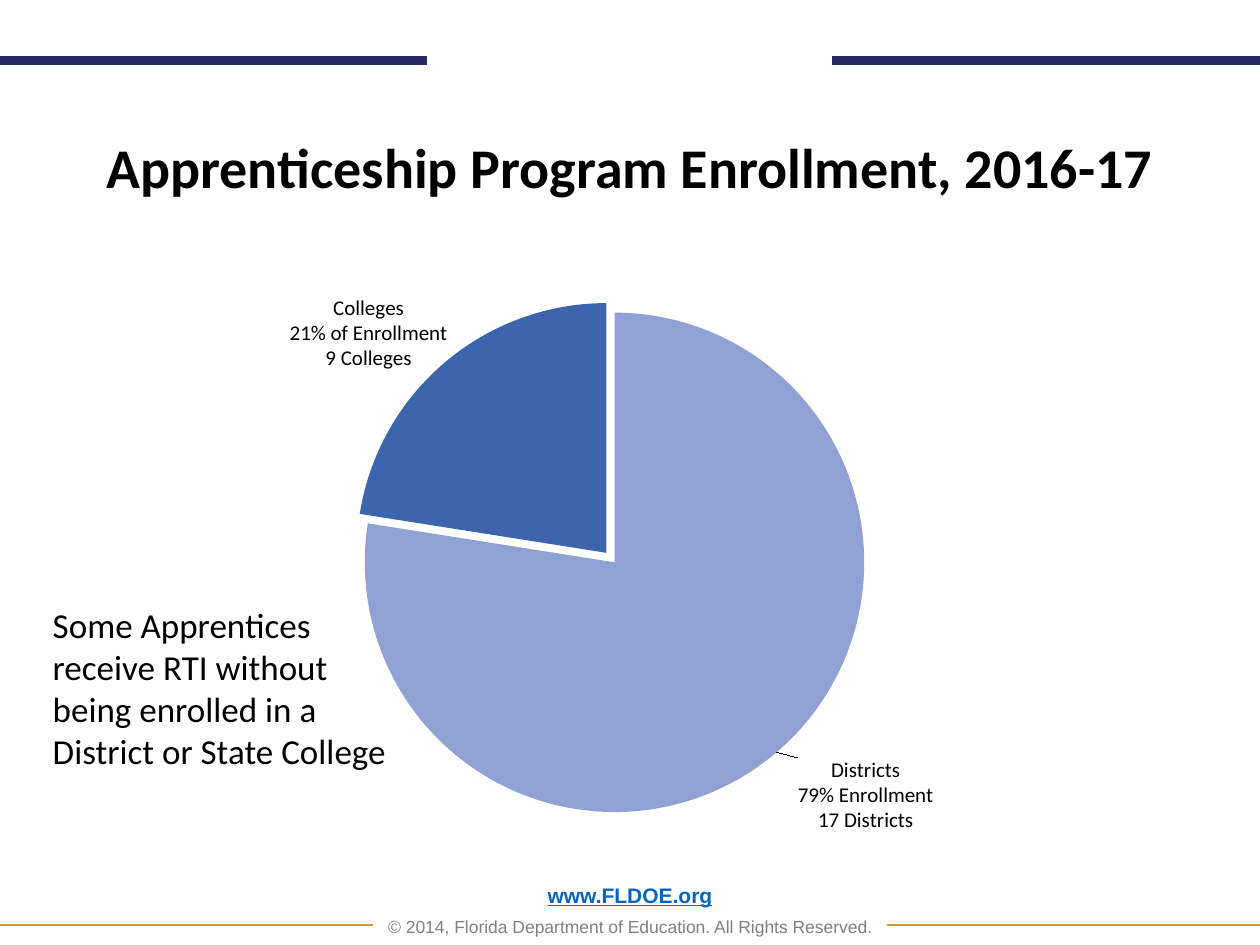
from lxml import etree
from pptx import Presentation
from pptx.chart.data import CategoryChartData
from pptx.dml.color import RGBColor
from pptx.enum.chart import XL_CHART_TYPE, XL_LABEL_POSITION
from pptx.enum.shapes import MSO_CONNECTOR
from pptx.enum.text import MSO_ANCHOR, PP_ALIGN
from pptx.oxml import parse_xml
from pptx.oxml.ns import nsdecls, qn
from pptx.util import Inches, Pt

PIE = XL_CHART_TYPE.PIE
OUTSIDE_END = XL_LABEL_POSITION.OUTSIDE_END
STRAIGHT = MSO_CONNECTOR.STRAIGHT
TOP, BOTTOM = MSO_ANCHOR.TOP, MSO_ANCHOR.BOTTOM
LEFT, CENTER = PP_ALIGN.LEFT, PP_ALIGN.CENTER

BLACK = RGBColor(0x00, 0x00, 0x00)
GRAY = RGBColor(0x80, 0x80, 0x80)
LINK_BLUE = RGBColor(0x05, 0x63, 0xC1)
NAVY = RGBColor(0x26, 0x2A, 0x63)
GOLD = RGBColor(0xCD, 0x9D, 0x2C)
DISTRICT_BLUE = RGBColor(0x90, 0xA2, 0xD3)
COLLEGE_BLUE = RGBColor(0x3C, 0x65, 0xAE)


def manual_layout(target="", **values):
    """Return a chart layout element with the given fractions."""
    parts = "".join(f'<c:{key} val="{value}"/>' for key, value in values.items())
    return parse_xml(f'<c:layout {nsdecls("c")}><c:manualLayout>{target}{parts}'
                     "</c:manualLayout></c:layout>")


class SlideBuilder:
    """Holds the fonts and the current slide."""

    body_font = "Calibri"
    footer_font = "Arial"

    def __init__(self, slide):
        self.slide = slide

    def style(self, font, size, color=BLACK, bold=False, name=None):
        font.name = name or self.body_font
        font.size = Pt(size)
        font.bold = bold
        font.color.rgb = color

    def text_box(self, left, top, width, height, anchor=TOP):
        shape = self.slide.shapes.add_textbox(
            Inches(left), Inches(top), Inches(width), Inches(height))
        shape.text_frame.word_wrap = True
        shape.text_frame.vertical_anchor = anchor
        return shape.text_frame

    def add_text(self, paragraph, text, size, alignment=LEFT, spacing=None, **style):
        paragraph.alignment = alignment
        paragraph.line_spacing = spacing
        run = paragraph.add_run()
        run.text = text
        self.style(run.font, size, **style)
        return run

    def rule(self, start, end, y, color, weight):
        line = self.slide.shapes.add_connector(
            STRAIGHT, Inches(start), Inches(y), Inches(end), Inches(y))
        line.line.color.rgb = color
        line.line.width = Pt(weight)
        etree.SubElement(line._element.spPr, qn("a:effectLst"))

    def pie(self, left, top, width, height, slices):
        data = CategoryChartData(number_format="#,##0")
        data.categories = [str(index + 1) for index in range(len(slices))]
        data.add_series("Series 1", [part["value"] for part in slices])
        chart = self.slide.shapes.add_chart(
            PIE, Inches(left), Inches(top), Inches(width), Inches(height), data).chart
        chart.has_title = False
        chart.has_legend = False
        self.style(chart.font, 10)

        # Plot area placed by hand, with room for the pulled-out slice
        plot_area = chart._chartSpace.find(".//" + qn("c:plotArea"))
        for layout in plot_area.findall(qn("c:layout")):
            plot_area.remove(layout)
        plot_area.insert(0, manual_layout(
            '<c:layoutTarget val="inner"/>', xMode="edge", yMode="edge",
            x=0.17, y=0.14, w=0.61, h=0.77))

        plot = chart.plots[0]
        plot.vary_by_categories = True
        series = plot.series[0]
        labels = series.data_labels
        labels.show_value = True
        labels.number_format = "#,##0"
        labels.number_format_is_linked = False
        labels.position = OUTSIDE_END
        self.style(labels.font, 12)
        for index, part in enumerate(slices):
            self.pie_slice(series.points[index], **part)

        # Small shifts of the labels away from their usual places
        for label, part in zip(series._element.iter(qn("c:dLbl")), slices):
            x, y = part["shift"]
            label.find(qn("c:idx")).addnext(manual_layout(x=x, y=y))
        for point, part in zip(series._element.iter(qn("c:dPt")), slices):
            explosion = parse_xml(
                f'<c:explosion {nsdecls("c")} val="{part["pull"]}"/>')
            point.find(qn("c:spPr")).addprevious(explosion)

    def pie_slice(self, point, lines, color, **_):
        point.format.fill.solid()
        point.format.fill.fore_color.rgb = color
        frame = point.data_label.text_frame
        for index, line in enumerate(lines):
            paragraph = frame.add_paragraph() if index else frame.paragraphs[0]
            self.add_text(paragraph, line, 12, CENTER)
        point.data_label.position = OUTSIDE_END


def main():
    presentation = Presentation()
    presentation.slide_width = Inches(10)
    presentation.slide_height = Inches(7.5)
    builder = SlideBuilder(presentation.slides.add_slide(presentation.slide_layouts[6]))

    # Footer
    footer = builder.text_box(0.69, 7.06, 8.62, 0.43, BOTTOM)
    address = builder.add_text(footer.paragraphs[0], "www.FLDOE.org", 12, CENTER, 0.9,
                               color=LINK_BLUE, bold=True, name=builder.footer_font)
    address.font.underline = True
    rights = footer.add_paragraph()
    rights.space_before = Pt(6)
    builder.add_text(rights, "© 2014, Florida Department of Education. All Rights Reserved.",
                     10, CENTER, 0.9, color=GRAY, name=builder.footer_font)

    # Rules at the top and bottom
    for start, end, y, color, weight in (
            (0, 3.39, 0.48, NAVY, 5), (6.6, 10, 0.48, NAVY, 5),
            (0, 2.96, 7.34, GOLD, 1), (7.04, 10, 7.34, GOLD, 1)):
        builder.rule(start, end, y, color, weight)

    # Title
    title = builder.text_box(0, 1.06, 10, 0.69)
    builder.add_text(title.paragraphs[0], "Apprenticeship Program Enrollment, 2016-17",
                     32, CENTER, 0.9, bold=True)

    # Enrollment pie
    builder.pie(1.79, 1.75, 6.5, 5.17, [
        {"value": 9232, "color": DISTRICT_BLUE, "pull": 0, "shift": (0.02, 0),
         "lines": ("Districts", "79% Enrollment", "17 Districts")},
        {"value": 2681, "color": COLLEGE_BLUE, "pull": 5, "shift": (0.01, 0.02),
         "lines": ("Colleges", "21% of Enrollment", "9 Colleges")},
    ])

    # Side note
    note = builder.text_box(0.32, 4.74, 2.92, 1.45)
    builder.add_text(note.paragraphs[0], "Some Apprentices receive RTI without being "
                     "enrolled in a District or State College", 20)

    presentation.save("out.pptx")


if __name__ == "__main__":
    main()
